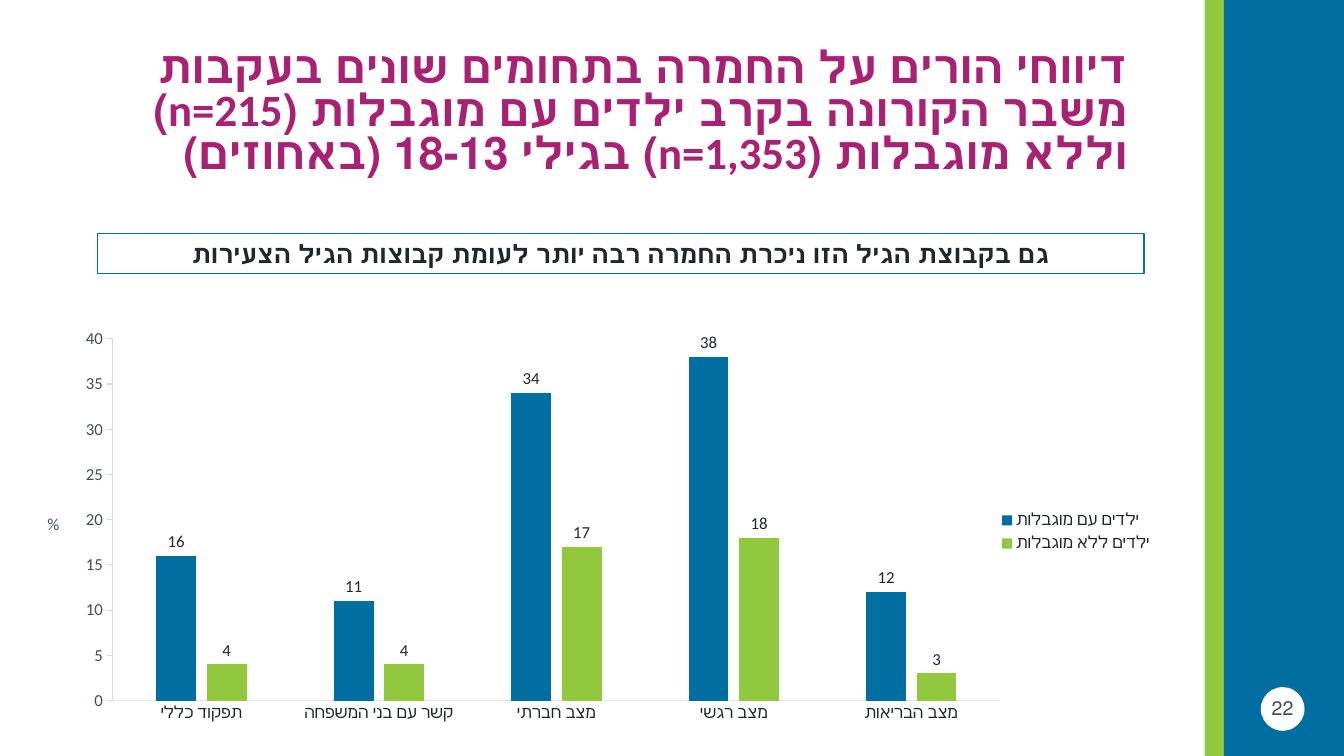
import pptx
import pptx.util
import pptx.chart.data
import pptx.dml.color
import pptx.enum.chart
import pptx.enum.shapes
import pptx.enum.text
import pptx.oxml
import pptx.oxml.ns

Pt = pptx.util.Pt
RGB = pptx.dml.color.RGBColor.from_string
Align = pptx.enum.text.PP_ALIGN
Kind = pptx.enum.shapes.MSO_SHAPE
Place = pptx.enum.chart

theme = {
    "font": "Calibri",
    "blue": RGB("006EA0"), "green": RGB("92C83E"), "plum": RGB("A82172"),
    "dark": RGB("21282C"), "gray": RGB("424F58"), "white": RGB("FFFFFF"),
    "base": RGB("E0E5E8"), "rule": RGB("D9D9D9"),
    "title": Pt(32), "note": Pt(18), "page": Pt(14), "chart": Pt(12),
    "thin": Pt(0.75),
}

# Grid of 160 columns by 90 rows
deck = pptx.Presentation()
cell = pptx.util.Inches(1 / 12)
deck.slide_width, deck.slide_height = 160 * cell, 90 * cell
slide = deck.slides.add_slide(deck.slide_layouts[6])
shapes = slide.shapes


def grid(*cells):
    return [round(n * cell) for n in cells]


def style(font, size, color, bold=False):
    font.name, font.size, font.bold = theme["font"], theme[size], bold
    font.color.rgb = theme[color]


# Side bands and page disc
for kind, color, area in (
    (Kind.RECTANGLE, "green", (143.4, 0, 2.4, 90)),
    (Kind.RECTANGLE, "blue", (145.7, 0, 14.3, 90)),
    (Kind.OVAL, "white", (150.1, 81.8, 5.2, 5.2)),
):
    band = shapes.add_shape(kind, *grid(*area))
    band.shadow.inherit = False
    band.fill.solid()
    band.fill.fore_color.rgb = theme[color]
    band.line.fill.background()

# Chart data
data = pptx.chart.data.CategoryChartData()
data.categories = ["תפקוד כללי", "קשר עם בני המשפחה", "מצב חברתי",
                   "מצב רגשי", "מצב הבריאות"]
data.add_series("ילדים עם מוגבלות", (16, 11, 34, 38, 12))
data.add_series("ילדים ללא מוגבלות", (4, 4, 17, 18, 3))
chart = shapes.add_chart(Place.XL_CHART_TYPE.COLUMN_CLUSTERED,
                         *grid(2.3, 38.4, 139, 48.4), data).chart
chart.has_title = False
style(chart.font, "chart", "gray")

# Columns and their labels
plot = chart.plots[0]
plot.gap_width, plot.overlap = 219, -27
plot.vary_by_categories = False
for series, color in zip(plot.series, ("blue", "green")):
    series.format.fill.solid()
    series.format.fill.fore_color.rgb = theme[color]
    labels = series.data_labels
    labels.show_value = True
    labels.position = Place.XL_LABEL_POSITION.OUTSIDE_END
    style(labels.font, "chart", "dark")

# Axes
cats, vals = chart.category_axis, chart.value_axis
vals.minimum_scale, vals.maximum_scale, vals.major_unit = 0, 40, 5
vals.has_major_gridlines = False
ticks = Place.XL_TICK_MARK
for axis, color, line, tick in ((cats, "dark", "base", ticks.NONE),
                                (vals, "gray", "rule", ticks.OUTSIDE)):
    style(axis.tick_labels.font, "chart", color)
    axis.major_tick_mark, axis.minor_tick_mark = tick, ticks.NONE
    axis.format.line.color.rgb = theme[line]
    axis.format.line.width = theme["thin"]
unit = vals.axis_title.text_frame
unit.text = "%"
style(unit.paragraphs[0].runs[0].font, "chart", "gray")
body = unit.paragraphs[0]._p.getparent().find(pptx.oxml.ns.qn("a:bodyPr"))
body.set("rot", "0")
body.set("vert", "horz")

# Legend
chart.has_legend = True
legend = chart.legend
legend.position = Place.XL_LEGEND_POSITION.RIGHT
legend.include_in_layout = False
style(legend.font, "chart", "dark")

# Fixed places of plot and legend, as shares of the chart
area = chart._chartSpace.chart.plotArea
for part, index, inner, shares in (
    (area, 0, '<c:layoutTarget val="inner"/>', (0.08, 0.04, 0.76, 0.89)),
    (legend._element, 1, "", (0.83, 0.45, 0.15, 0.13)),
):
    for old in part.findall(pptx.oxml.ns.qn("c:layout")):
        part.remove(old)
    sizes = "".join(f'<c:{key} val="{share}"/>' for key, share in zip("xywh", shares))
    part.insert(index, pptx.oxml.parse_xml(
        f'<c:layout {pptx.oxml.ns.nsdecls("c")}><c:manualLayout>{inner}'
        f'<c:xMode val="edge"/><c:yMode val="edge"/>{sizes}'
        '</c:manualLayout></c:layout>'))

# Title, framed note and page number
title = shapes.add_textbox(*grid(4.6, 4.8, 130.9, 17.4))
note = shapes.add_shape(Kind.RECTANGLE, *grid(11.6, 27.8, 124.6, 4.8))
note.shadow.inherit = False
note.fill.background()
note.line.color.rgb, note.line.width = theme["blue"], theme["thin"]
page = shapes.add_textbox(*grid(149.2, 82.3, 7, 4.8))
middle, top = pptx.enum.text.MSO_ANCHOR.MIDDLE, pptx.enum.text.MSO_ANCHOR.TOP
for box, text, size, color, bold, align, anchor in (
    (title, "דיווחי הורים על החמרה בתחומים שונים בעקבות משבר הקורונה בקרב "
            "ילדים עם מוגבלות (n=215) וללא מוגבלות (n=1,353) בגילי 18-13 (באחוזים)",
     "title", "plum", True, Align.RIGHT, middle),
    (note, "גם בקבוצת הגיל הזו ניכרת החמרה רבה יותר לעומת קבוצות הגיל הצעירות",
     "note", "dark", True, Align.CENTER, top),
    (page, "22", "page", "gray", False, Align.CENTER, top),
):
    frame = box.text_frame
    frame.text, frame.word_wrap, frame.vertical_anchor = text, True, anchor
    line = frame.paragraphs[0]
    line.alignment = align
    line._p.get_or_add_pPr().set("rtl", "1")
    style(line.runs[0].font, size, color, bold)
title.text_frame.paragraphs[0].line_spacing = 0.8
note.text_frame.auto_size = pptx.enum.text.MSO_AUTO_SIZE.SHAPE_TO_FIT_TEXT

deck.save("out.pptx")
